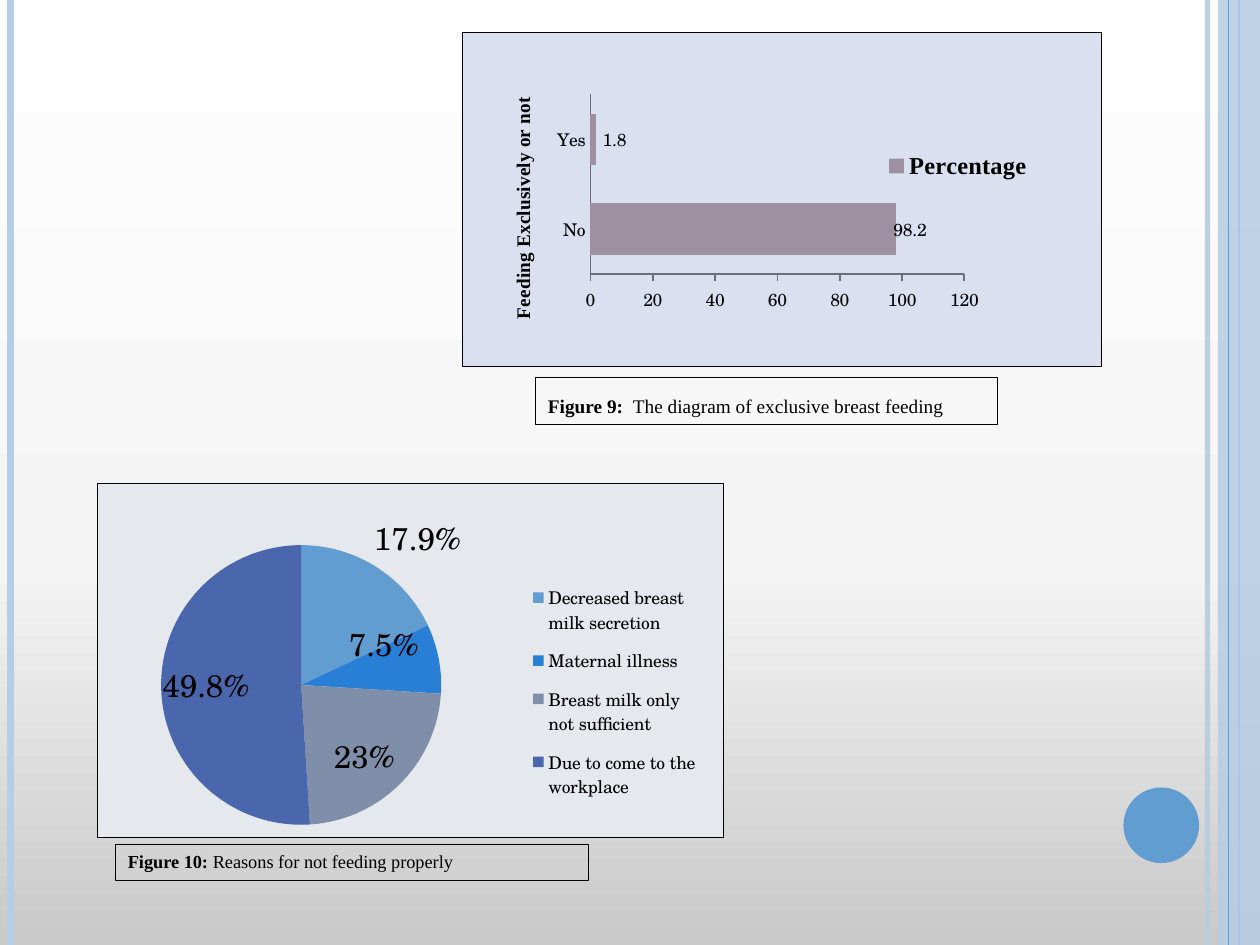
from copy import deepcopy
from dataclasses import dataclass

from lxml.etree import SubElement
from pptx import Presentation
from pptx.chart.data import CategoryChartData as Data
from pptx.dml.color import RGBColor as RGB
from pptx.enum.chart import XL_CHART_TYPE as Kind, XL_LABEL_POSITION as Pos
from pptx.enum.chart import XL_LEGEND_POSITION as Side, XL_TICK_MARK as Tick
from pptx.enum.shapes import MSO_CONNECTOR as Conn, MSO_SHAPE as Form
from pptx.enum.text import MSO_ANCHOR as Anchor, PP_ALIGN as Align
from pptx.oxml import parse_xml
from pptx.oxml.ns import nsdecls, qn
from pptx.util import Inches, Pt

COLS, ROWS = 120, 90


@dataclass(frozen=True)
class Theme:
    ink: str = "000000"
    pale: str = "B7CCE5"
    blue: str = "629DD1"
    axis: str = "6E6E78"
    bar: str = "9D90A0"
    bar_bg: str = "DAE0EF"
    pie_bg: str = "E5E9EE"
    slices: tuple = ("629DD1", "297FD5", "7F8FA9", "4A66AC")
    fade: tuple = ((0, "C9C9C9"), (0.4, "F4F4F4"), (1, "FFFFFF"))
    serif: str = "Times New Roman"
    school: str = "TeX Gyre Schola"
    note: float = 10
    small: float = 10.5
    text: float = 11
    key: float = 14
    share: float = 18


def style(font, size, face, color, bold=False):
    font.size, font.name, font.bold = Pt(size), face, bold
    font.color.rgb = RGB.from_string(color)


def write(para, text, **form):
    run = para.add_run()
    run.text = text
    style(run.font, **form)


def fade(fill, alpha):
    """Set the opacity, in percent, of a solid fill inside the given element."""
    color = fill.find(".//" + qn("a:srgbClr"))
    SubElement(color, qn("a:alpha"), val=str(alpha * 1000))


def place(node, inner=False, edge=True, **box):
    """Give a chart part a manual layout, in shares of the chart."""
    for old in node.findall(qn("c:layout")):
        node.remove(old)
    marks = [node.find(qn(t)) for t in ("c:idx", "c:legendPos", "c:tx")]
    prior = next((m for m in marks if m is not None), None)
    layout = node.makeelement(qn("c:layout"))
    node.insert(0 if prior is None else node.index(prior) + 1, layout)
    part = SubElement(layout, qn("c:manualLayout"))
    if inner:
        SubElement(part, qn("c:layoutTarget"), val="inner")
    if edge:
        for axis in "xy":
            SubElement(part, qn(f"c:{axis}Mode"), val="edge")
    for name in ("x", "y", "w", "h"):
        if name in box:
            SubElement(part, qn("c:" + name), val=str(box[name]))


def nudge(series, moves):
    """Shift the series' point labels, in shares of the chart."""
    for tag, (x, y) in zip(series._element.iter(qn("c:dLbl")), moves):
        place(tag, edge=False, x=x, y=y)


class Deck:
    """Holds the theme and the current slide; lengths are grid columns and rows."""

    def __init__(self, theme):
        self.look = theme
        self.show = Presentation()
        self.show.slide_width, self.show.slide_height = Inches(10), Inches(7.5)
        self.page = self.show.slides.add_slide(self.show.slide_layouts[6])

    def grid(self, x, y, *size):
        wide, high = self.show.slide_width / COLS, self.show.slide_height / ROWS
        return [int(n * u) for n, u in zip((x, y, *size), (wide, high) * 2)]

    def back(self):
        fill = self.page.background.fill
        fill.gradient()
        fill.gradient_angle = 90
        first = self.page.element.find(".//" + qn("a:gs"))
        first.addnext(deepcopy(first))
        for stop, (spot, color) in zip(fill.gradient_stops, self.look.fade):
            stop.position, stop.color.rgb = spot, RGB.from_string(color)

    def rule(self, col, color, width, alpha=100):
        ends = self.grid(col, 0, col, ROWS)
        line = self.page.shapes.add_connector(Conn.STRAIGHT, *ends)
        line.line.color.rgb = RGB.from_string(color)
        line.line.width = Pt(width)
        props = line.element.spPr
        SubElement(props, qn("a:effectLst"))
        if alpha < 100:
            fade(props, alpha)

    def shape(self, form, box, fill=None, alpha=100):
        item = self.page.shapes.add_shape(form, *self.grid(*box))
        item.shadow.inherit = False
        item.line.fill.background()
        if fill:
            item.fill.solid()
            item.fill.fore_color.rgb = RGB.from_string(fill)
        else:
            item.fill.background()
        if alpha < 100:
            fade(item.element.spPr, alpha)
        return item

    def label(self, box, head, body, size, space=None, after=0):
        item = self.shape(Form.RECTANGLE, box)
        item.line.color.rgb = RGB.from_string(self.look.ink)
        item.line.width = Pt(0.25)
        frame = item.text_frame
        frame.word_wrap, frame.vertical_anchor = True, Anchor.TOP
        para = frame.paragraphs[0]
        para.alignment = Align.JUSTIFY if space else Align.LEFT
        para.line_spacing, para.space_after = space, Pt(after)
        form = dict(size=size, face=self.look.serif, color=self.look.ink)
        write(para, head, bold=True, **form)
        write(para, body, **form)

    def chart(self, kind, box, fill, name, rows, plot, key):
        """Add a framed chart of one series with a legend."""
        look = self.look
        data = Data()
        data.categories = [cat for cat, _ in rows]
        data.add_series(name, [val for _, val in rows])
        chart = self.page.shapes.add_chart(kind, *self.grid(*box), data).chart
        style(chart.font, look.note, look.school, look.ink)
        chart.has_title, chart.has_legend = False, True
        chart.legend.position = Side.RIGHT
        chart.legend.include_in_layout = False
        root = chart.element
        root.find(qn("c:chart")).addnext(parse_xml(
            f'<c:spPr {nsdecls("c", "a")}>'
            f'<a:solidFill><a:srgbClr val="{fill}"/></a:solidFill>'
            f'<a:ln w="{Pt(0.75)}"><a:solidFill><a:srgbClr val="{look.ink}"/>'
            '</a:solidFill></a:ln></c:spPr>'))
        area = root.find(".//" + qn("c:plotArea"))
        place(area, inner=True, **dict(zip("xywh", plot)))
        place(chart.legend._element, **dict(zip("xywh", key)))
        return chart

    def bars(self, box, rows):
        look = self.look
        chart = self.chart(Kind.BAR_STACKED, box, look.bar_bg, "Percentage", rows,
                           (0.2, 0.186, 0.585, 0.537), (0.66, 0.34, 0.23, 0.12))
        style(chart.legend.font, look.key, look.serif, look.ink, True)
        plot = chart.plots[0]
        plot.gap_width, plot.overlap, plot.vary_by_categories = 75, 100, False
        cats, vals = chart.category_axis, chart.value_axis
        cats.major_tick_mark, vals.major_tick_mark = Tick.NONE, Tick.OUTSIDE
        vals.has_major_gridlines = False
        vals.minimum_scale, vals.maximum_scale, vals.major_unit = 0, 120, 20
        for axis in (cats, vals):
            axis.format.line.color.rgb = RGB.from_string(look.axis)
            axis.format.line.width = Pt(1)
        write(cats.axis_title.text_frame.paragraphs[0], "Feeding Exclusively or not",
              size=look.text, face=look.serif, color=look.ink, bold=True)
        place(cats.axis_title._element, x=0.07, y=0.185)
        series = plot.series[0]
        series.format.fill.solid()
        series.format.fill.fore_color.rgb = RGB.from_string(look.bar)
        for i in range(len(rows)):
            series.points[i].data_label.position = Pos.INSIDE_END
        nudge(series, [(0.055, 0)] * len(rows))

    def pie(self, box, rows, marks):
        look = self.look
        chart = self.chart(Kind.PIE, box, look.pie_bg, "Series 1", rows,
                           (0.013, 0.174, 0.625, 0.791), (0.685, 0.25, 0.28, 0.68))
        series = chart.plots[0].series[0]
        form = dict(size=look.share, face=look.school, color=look.ink)
        tags = series.data_labels
        tags.show_value, tags.show_percentage = False, True
        tags.number_format, tags.number_format_is_linked = "0%", False
        tags.position = Pos.INSIDE_END
        style(tags.font, **form)
        for i, color in enumerate(look.slices):
            fill = series.points[i].format.fill
            fill.solid()
            fill.fore_color.rgb = RGB.from_string(color)
        for i, (text, spot, _) in marks.items():
            tag = series.points[i].data_label
            write(tag.text_frame.paragraphs[0], text, **form)
            tag.position = spot
        nudge(series, [move for *_, move in marks.values()])


def main():
    look = Theme()
    deck = Deck(look)
    deck.back()
    deck.rule(115, look.pale, 3, 93)
    deck.rule(1, look.pale, 4.5)
    deck.rule(118, look.blue, 1.5)
    deck.shape(Form.RECTANGLE, (116, 0, 4, ROWS), look.pale, 87)
    deck.rule(117, look.blue, 0.75)
    deck.shape(Form.OVAL, (107, 75, 7.2, 7.2), look.blue)
    deck.bars((44, 3, 61, 32), [("No", 98.2), ("Yes", 1.8)])
    deck.label((51, 35.9, 44, 4.5), "Figure 9:  ",
               "The diagram of exclusive breast feeding", look.text, 1.5, 8)
    deck.pie((9.2, 46, 59.8, 33.8),
             [("Decreased breast milk secretion", 18), ("Maternal illness", 8),
              ("Breast milk only not sufficient", 23),
              ("Due to come to the workplace", 51)],
             {0: ("17.9%", Pos.OUTSIDE_END, (-0.01, 0)),
              1: ("7.5%", Pos.INSIDE_END, (-0.02, -0.11)),
              3: ("49.8%", Pos.INSIDE_END, (-0.01, -0.01))})
    deck.label((11, 80.4, 45, 3.4), "Figure 10: ",
               "Reasons for not feeding properly", look.small)
    deck.show.save("out.pptx")


if __name__ == "__main__":
    main()
